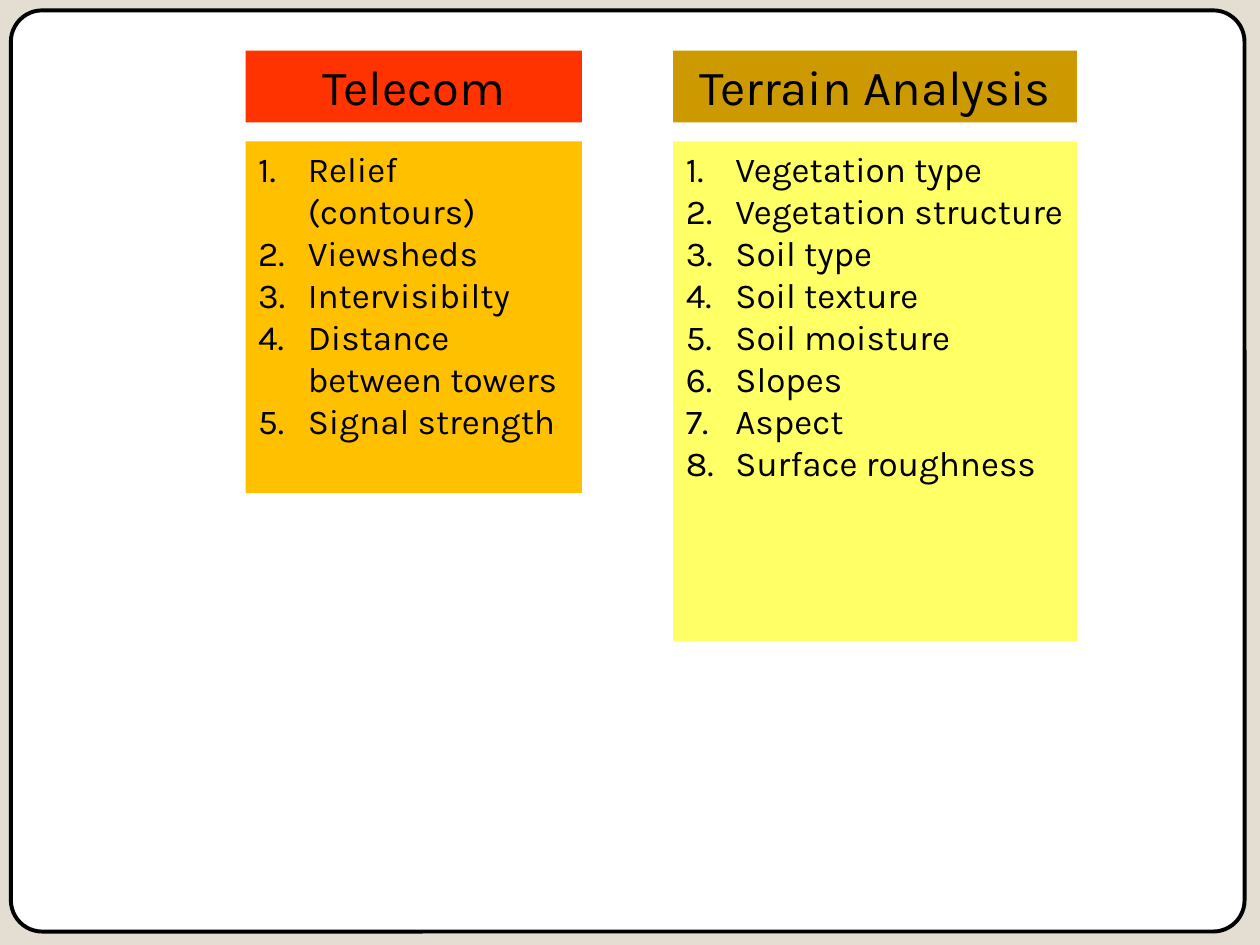
"""Build a slide comparing map needs of telecom and terrain analysis."""
from lxml import etree
from pptx import Presentation
from pptx.dml.color import RGBColor
from pptx.enum import shapes, text
from pptx.oxml import ns
from pptx.util import Cm, Pt

HUES = {"back": "E3DED1", "page": "FFFFFF", "ink": "000000",
        "red": "FF3300", "amber": "FFC000", "ochre": "CC9900", "lemon": "FFFF66"}
FONT = "Karla"
TOP, HEAD, LIST = 1.02, 1.45, 2.85
INDENT = 1
COLS = [
    {"left": 4.95, "width": 6.78, "deep": 7.09, "hues": ("red", "amber"),
     "head": "Telecom",
     "items": ["Relief (contours)", "Viewsheds", "Intervisibilty",
               "Distance between towers", "Signal strength"]},
    {"left": 13.57, "width": 8.14, "deep": 10.08, "hues": ("ochre", "lemon"),
     "head": "Terrain Analysis",
     "items": ["Vegetation type", "Vegetation structure", "Soil type", "Soil texture",
               "Soil moisture", "Slopes", "Aspect", "Surface roughness"]},
]


def tint(fill, hue):
    fill.solid()
    fill.fore_color.rgb = RGBColor.from_string(HUES[hue])


def number(para):
    props = para._p.get_or_add_pPr()
    props.set("marL", str(Cm(INDENT)))
    props.set("indent", str(-Cm(INDENT)))
    etree.SubElement(props, ns.qn("a:buFont"), typeface="+mj-lt")
    etree.SubElement(props, ns.qn("a:buAutoNum"), type="arabicPeriod")


def block(box, place, hue, lines, size, listed):
    box.left, box.top, box.width, box.height = map(Cm, place)
    tint(box.fill, hue)
    frame = box.text_frame
    frame.text = "\n".join(lines)
    frame.auto_size = text.MSO_AUTO_SIZE.NONE
    frame.word_wrap = True
    frame.vertical_anchor = text.MSO_ANCHOR.TOP
    for para in frame.paragraphs:
        para.space_before = Pt(0)
        para.alignment = text.PP_ALIGN.LEFT if listed else text.PP_ALIGN.CENTER
        if listed:
            number(para)
        font = para.font
        font.name, font.size, font.bold = FONT, Pt(size), False
        font.color.rgb = RGBColor.from_string(HUES["ink"])


def main():
    deck = Presentation()
    deck.slide_width, deck.slide_height = Cm(25.4), Cm(19.05)
    slide = deck.slides.add_slide(deck.slide_layouts[4])
    tint(slide.background.fill, "back")
    title = slide.shapes.title._element
    title.getparent().remove(title)

    page = slide.shapes.add_shape(shapes.MSO_SHAPE.ROUNDED_RECTANGLE,
                                  Cm(0.22), Cm(0.21), Cm(24.87), Cm(18.57))
    page.adjustments[0] = 0.034
    page.shadow.inherit = False
    tint(page.fill, "page")
    tint(page.line.fill, "ink")
    page.line.width = Pt(2.25)
    slide.shapes._spTree.insert(2, page._element)

    slots = {box.placeholder_format.idx: box for box in slide.placeholders}
    for i, col in enumerate(COLS):
        left, width = col["left"], col["width"]
        head, body = col["hues"]
        block(slots[2 * i + 1], (left, TOP, width, HEAD), head, [col["head"]], 28, False)
        block(slots[2 * i + 2], (left, LIST, width, col["deep"]), body, col["items"], 20, True)
    deck.save("out.pptx")


if __name__ == "__main__":
    main()
